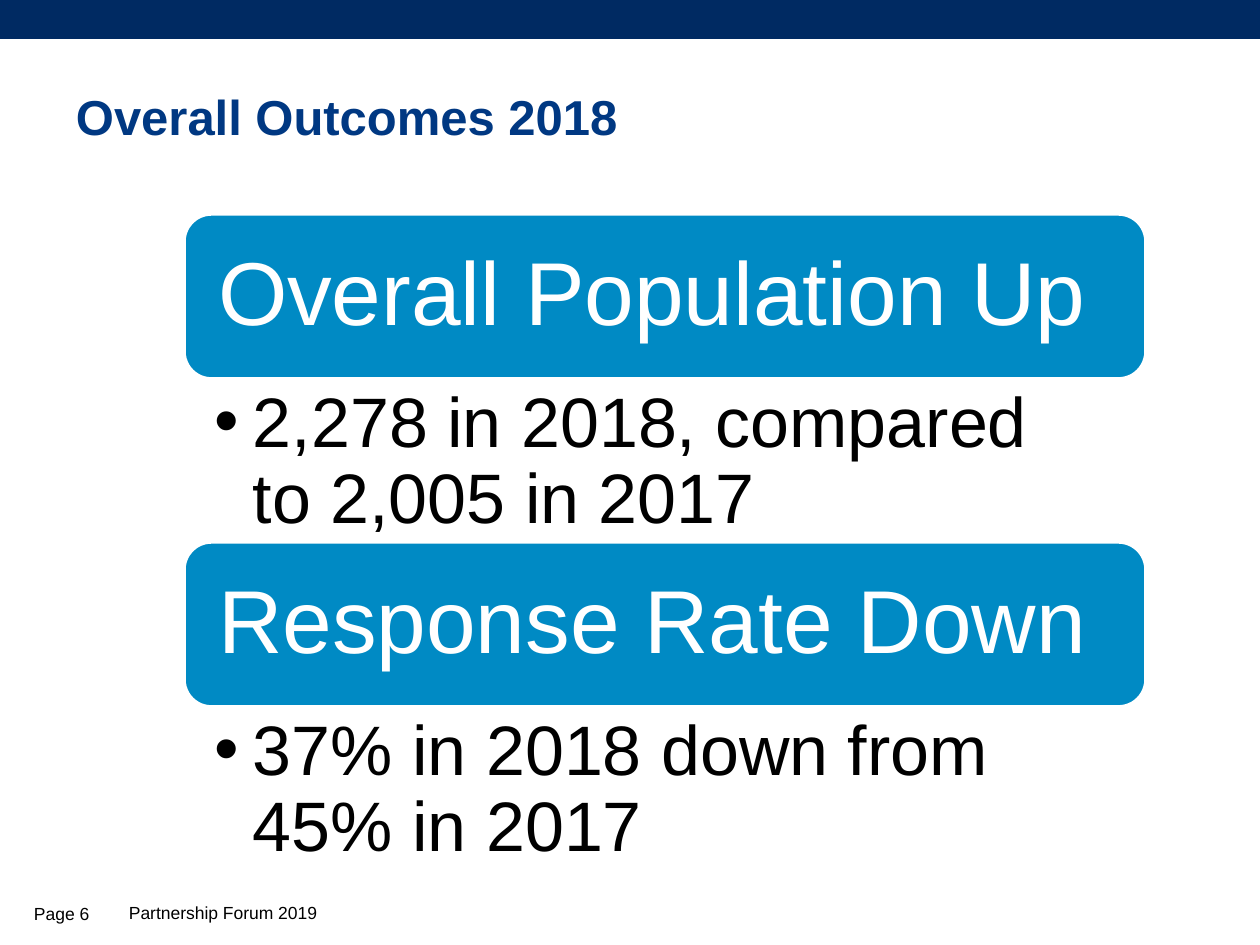
from dataclasses import dataclass

from lxml import etree
from pptx import Presentation
from pptx.dml.color import RGBColor
from pptx.enum.shapes import MSO_SHAPE
from pptx.enum.text import MSO_ANCHOR, MSO_AUTO_SIZE, PP_ALIGN
from pptx.oxml.ns import qn
from pptx.util import Emu, Pt

RECTANGLE = MSO_SHAPE.RECTANGLE
ROUNDED = MSO_SHAPE.ROUNDED_RECTANGLE
TOP = MSO_ANCHOR.TOP
MIDDLE = MSO_ANCHOR.MIDDLE
LEFT = PP_ALIGN.LEFT
NO_FIT = MSO_AUTO_SIZE.NONE


@dataclass(frozen=True)
class Theme:
    font: str = "Arial"
    navy: RGBColor = RGBColor(0x00, 0x2A, 0x62)
    title: RGBColor = RGBColor(0x00, 0x38, 0x82)
    panel: RGBColor = RGBColor(0x00, 0x8A, 0xC4)
    white: RGBColor = RGBColor(0xFF, 0xFF, 0xFF)
    black: RGBColor = RGBColor(0x00, 0x00, 0x00)
    title_size: int = 28
    heading_size: int = 51
    detail_size: int = 40
    footer_size: int = 10


THEME = Theme()


def px(*lengths):
    return [Emu(round(length * 914400 / 126)) for length in lengths]


def write(shape, text, size, color, anchor, insets=(13, 6, 13, 6), bold=False):
    frame = shape.text_frame
    frame.text = text
    frame.word_wrap = True
    frame.auto_size = NO_FIT
    frame.vertical_anchor = anchor
    (frame.margin_left, frame.margin_top,
     frame.margin_right, frame.margin_bottom) = px(*insets)
    paragraph = frame.paragraphs[0]
    paragraph.alignment = LEFT
    paragraph.space_before = Pt(0)
    font = paragraph.runs[0].font
    font.name, font.size, font.bold = THEME.font, Pt(size), bold
    font.color.rgb = color
    return paragraph


prs = Presentation()
prs.slide_width, prs.slide_height = px(1260, 945)
slide = prs.slides.add_slide(prs.slide_layouts[3])

banner = slide.shapes.add_shape(RECTANGLE, *px(0, 0, 1260, 39))
banner.shadow.inherit = False
banner.fill.solid()
banner.fill.fore_color.rgb = THEME.navy
banner.line.fill.background()

title = slide.shapes.title
title.left, title.top, title.width, title.height = px(63, 76, 1143, 79)
write(title, "Overall Outcomes 2018", THEME.title_size, THEME.title, MIDDLE, bold=True)

outcomes = [
    ("Overall Population Up", "2,278 in 2018, compared to 2,005 in 2017"),
    ("Response Rate Down", "37% in 2018 down from 45% in 2017"),
]
panel_left, panel_width, panel_height = 184, 962, 165
first_top, row_pitch, detail_height = 214, 328, 164

for row, (heading, detail) in enumerate(outcomes):
    top = first_top + row * row_pitch
    panel = slide.shapes.add_shape(
        ROUNDED, *px(panel_left, top, panel_width, panel_height))
    panel.shadow.inherit = False
    panel.fill.solid()
    panel.fill.fore_color.rgb = THEME.panel
    panel.line.color.rgb = THEME.white
    panel.line.width = Pt(2)
    heading_line = write(panel, heading, THEME.heading_size, THEME.white, MIDDLE,
                         insets=(26, 26, 26, 26))
    heading_line.line_spacing = 0.9

    body = slide.placeholders[row + 1]
    body.left, body.top, body.width, body.height = px(
        panel_left, top + panel_height, panel_width, detail_height)
    detail_line = write(body, detail, THEME.detail_size, THEME.black, TOP,
                        insets=(30, 8, 50, 8))
    detail_line.line_spacing = 0.9
    properties = detail_line._p.get_or_add_pPr()
    indent, = px(39)
    properties.set("marL", str(indent))
    properties.set("indent", str(-indent))
    etree.SubElement(properties, qn("a:buChar")).set("char", "•")

footers = [
    ("Partnership Forum 2019", (116, 896, 834, 38), TOP),
    ("Page 6", (21, 895, 93, 37), MIDDLE),
]
for text, box, anchor in footers:
    footer = slide.shapes.add_textbox(*px(*box))
    write(footer, text, THEME.footer_size, THEME.black, anchor)

prs.save("out.pptx")
